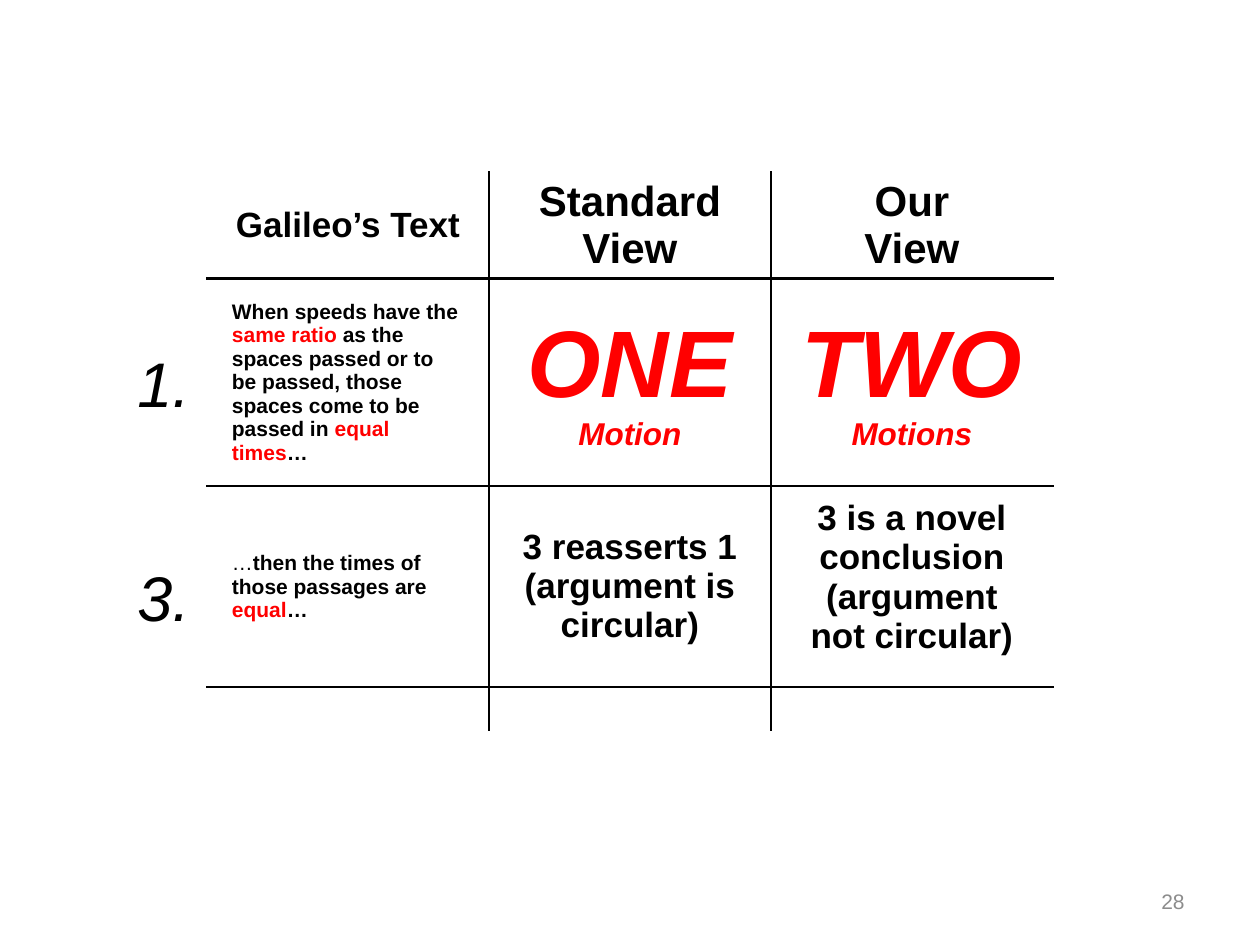
import pptx
import pptx.dml.color
import pptx.enum.text
import pptx.oxml
import pptx.oxml.ns
import pptx.util

PX = 914400 // 126
BLACK, RED, GREY = "000000", "FF0000", "8C8C8C"
ALIGN = pptx.enum.text.PP_ALIGN
ANCHOR = pptx.enum.text.MSO_ANCHOR


def add_span(para, text, size, color=BLACK, bold=False, italic=False):
    span = para.add_run()
    span.text = text
    span.font.name = "Arial"
    span.font.size = pptx.util.Pt(size)
    span.font.bold = bold
    span.font.italic = italic
    span.font.color.rgb = pptx.dml.color.RGBColor.from_string(color)


def add_border(cell, side, points):
    """Append one black cell edge; side is L, R, T or B, called in that order."""
    line = pptx.oxml.parse_xml(
        f'<a:ln{side} {pptx.oxml.ns.nsdecls("a")} w="{pptx.util.Pt(points)}">'
        f'<a:solidFill><a:srgbClr val="{BLACK}"/></a:solidFill></a:ln{side}>')
    cell._tc.get_or_add_tcPr().append(line)


deck = pptx.Presentation()
deck.slide_width = pptx.util.Inches(10)
deck.slide_height = pptx.util.Inches(7.5)
page = deck.slides.add_slide(deck.slide_layouts[6])

# Each cell is a list of paragraphs, each paragraph a list of
# (text, size, color, bold, italic) spans.
rows = [
    [
        [[("Galileo’s Text", 20, BLACK, True)]],
        [[("Standard View", 24, BLACK, True)]],
        [[("Our", 24, BLACK, True)], [("View", 24, BLACK, True)]],
    ],
    [
        [[("When speeds have the ", 12, BLACK, True),
          ("same ratio ", 12, RED, True),
          ("as the spaces passed or to be passed, those spaces come to be passed in ",
           12, BLACK, True),
          ("equal times", 12, RED, True),
          ("…", 12, BLACK, True)]],
        [[("ONE ", 54, RED, True, True), ("Motion", 18, RED, True, True)]],
        [[("TWO ", 54, RED, True, True), ("Motions", 18, RED, True, True)]],
    ],
    [
        [[("…", 12, BLACK),
          ("then the times of those passages are ", 12, BLACK, True),
          ("equal", 12, RED, True),
          ("…", 12, BLACK, True)]],
        [[("3 reasserts 1", 20, BLACK, True)],
         [("(argument is circular)", 20, BLACK, True)]],
        [[("3 is a novel conclusion", 20, BLACK, True)],
         [("(argument not circular)", 20, BLACK, True)]],
    ],
    [[], [], []],
]
row_heights = [106, 208, 201, 45]
column_width = 282
last_row, last_column = len(rows) - 1, 2
top_anchored = [(0, 1), (0, 2), (2, 2)]

table = page.shapes.add_table(
    len(rows), 3, 207 * PX, 172 * PX,
    3 * column_width * PX, sum(row_heights) * PX).table
table.first_row = False
table.horz_banding = False
for column in table.columns:
    column.width = column_width * PX

for r, row in enumerate(rows):
    table.rows[r].height = row_heights[r] * PX
    for c, paragraphs in enumerate(row):
        cell = table.cell(r, c)
        cell.vertical_anchor = ANCHOR.TOP if (r, c) in top_anchored else ANCHOR.MIDDLE
        if r in (1, 2):
            cell.margin_left = cell.margin_right = 25 * PX
            cell.margin_top = cell.margin_bottom = 13 * PX
        elif r == last_row:
            cell.margin_top = cell.margin_bottom = 0

        if c > 0:
            add_border(cell, "L", 1)
        if c < last_column:
            add_border(cell, "R", 1)
        if r > 0:
            add_border(cell, "T", 2 if r == 1 else 1)
        if r < last_row:
            add_border(cell, "B", 2 if r == 0 else 1)
        cell.fill.background()

        for i, spans in enumerate(paragraphs):
            frame = cell.text_frame
            para = frame.paragraphs[0] if i == 0 else frame.add_paragraph()
            para.alignment = ALIGN.LEFT if c == 0 and r > 0 else ALIGN.CENTER
            for span in spans:
                add_span(para, *span)

for label, top in (("1.", 338), ("3.", 552)):
    box = page.shapes.add_textbox(125 * PX, top * PX, 94 * PX, 89 * PX)
    box.text_frame.word_wrap = False
    add_span(box.text_frame.paragraphs[0], label, 36, italic=True)

number_box = page.shapes.add_textbox(903 * PX, 876 * PX, 294 * PX, 50 * PX)
number_box.text_frame.word_wrap = True
number_box.text_frame.vertical_anchor = ANCHOR.MIDDLE
number_para = number_box.text_frame.paragraphs[0]
number_para.alignment = ALIGN.RIGHT
add_span(number_para, "28", 12, GREY)

deck.save("out.pptx")
